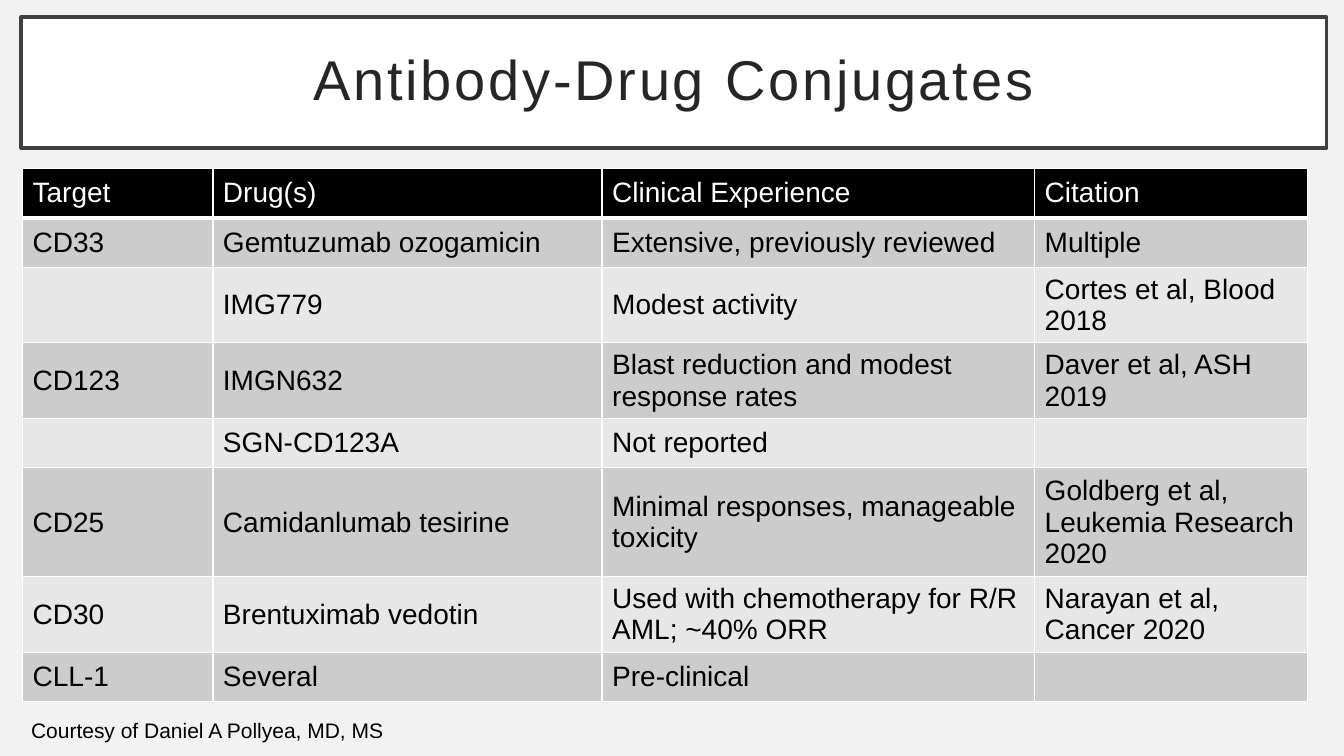
from pptx import Presentation
from pptx.dml.color import RGBColor
from pptx.enum.shapes import MSO_SHAPE
from pptx.enum.text import MSO_ANCHOR, PP_ALIGN
from pptx.oxml import parse_xml
from pptx.oxml.ns import nsdecls
from pptx.util import Pt

COLORS = {
    "background": "F2F2F2",
    "white": "FFFFFF",
    "black": "000000",
    "frame": "404040",
    "title": "262626",
    "odd_row": "CCCCCC",
    "even_row": "E7E7E7",
}
FONT = "Arial"
COLUMN_WIDTHS = [136, 278, 309, 195]
ROW_HEIGHTS = [35.28, 35.28, 54, 54, 35.28, 77.76, 54, 35.28]
CONJUGATES = [
    ["Target", "Drug(s)", "Clinical Experience", "Citation"],
    ["CD33", "Gemtuzumab ozogamicin", "Extensive, previously reviewed", "Multiple"],
    ["", "IMG779", "Modest activity", "Cortes et al, Blood 2018"],
    ["CD123", "IMGN632", "Blast reduction and modest response rates", "Daver et al, ASH 2019"],
    ["", "SGN-CD123A", "Not reported", ""],
    ["CD25", "Camidanlumab tesirine", "Minimal responses, manageable toxicity",
     "Goldberg et al, Leukemia Research 2020"],
    ["CD30", "Brentuximab vedotin", "Used with chemotherapy for R/R AML; ~40% ORR",
     "Narayan et al, Cancer 2020"],
    ["CLL-1", "Several", "Pre-clinical", ""],
]


def color(name):
    return RGBColor.from_string(COLORS[name])


def paint(fill, name):
    fill.solid()
    fill.fore_color.rgb = color(name)


def write(text_frame, text, size, color_name):
    paragraph = text_frame.paragraphs[0]
    paragraph.text = text
    paragraph.font.name = FONT
    paragraph.font.size = Pt(size)
    paragraph.font.color.rgb = color(color_name)
    return paragraph


def add_title(slide, text):
    shape = slide.shapes.add_shape(
        MSO_SHAPE.RECTANGLE, Pt(15.1), Pt(12.2), Pt(932.4), Pt(93.6))
    shape.shadow.inherit = False
    paint(shape.fill, "white")
    shape.line.color.rgb = color("frame")
    shape.line.width = Pt(2.5)
    frame = shape.text_frame
    frame.word_wrap = True
    frame.vertical_anchor = MSO_ANCHOR.MIDDLE
    frame.margin_left = frame.margin_right = Pt(14.4)
    frame.margin_top = frame.margin_bottom = Pt(14.4)
    paragraph = write(frame, text, 40, "title")
    paragraph.alignment = PP_ALIGN.CENTER
    paragraph.line_spacing = 0.9
    paragraph.runs[0].font._element.set("spc", "200")


def add_borders(cell, bottom_width):
    properties = cell._tc.get_or_add_tcPr()
    widths = {"lnL": 1, "lnR": 1, "lnT": 1, "lnB": bottom_width}
    for side, width in widths.items():
        properties.append(parse_xml(
            f'<a:{side} {nsdecls("a")} w="{Pt(width)}"><a:solidFill>'
            f'<a:srgbClr val="{COLORS["white"]}"/></a:solidFill></a:{side}>'))


def add_conjugate_table(slide):
    table = slide.shapes.add_table(
        len(ROW_HEIGHTS), len(COLUMN_WIDTHS), Pt(16.1), Pt(120.4),
        Pt(sum(COLUMN_WIDTHS)), Pt(sum(ROW_HEIGHTS))).table
    for column, width in zip(table.columns, COLUMN_WIDTHS):
        column.width = Pt(width)
    for index, (row, height, texts) in enumerate(zip(table.rows, ROW_HEIGHTS, CONJUGATES)):
        row.height = Pt(height)
        is_header = index == 0
        fill_name = "black" if is_header else "odd_row" if index % 2 else "even_row"
        for cell, text in zip(row.cells, texts):
            add_borders(cell, 3 if is_header else 1)
            paint(cell.fill, fill_name)
            cell.vertical_anchor = MSO_ANCHOR.MIDDLE
            paragraph = write(cell.text_frame, text, 20, "white" if is_header else "black")
            paragraph.font.bold = False


def add_credit(slide, text):
    box = slide.shapes.add_textbox(Pt(15.1), Pt(509), Pt(269.3), Pt(25.2))
    box.text_frame.word_wrap = False
    write(box.text_frame, text, 15, "black")


def main():
    presentation = Presentation()
    presentation.slide_width = Pt(960)
    presentation.slide_height = Pt(540)
    slide = presentation.slides.add_slide(presentation.slide_layouts[6])
    paint(slide.background.fill, "background")
    add_title(slide, "Antibody-Drug Conjugates")
    add_conjugate_table(slide)
    add_credit(slide, "Courtesy of Daniel A Pollyea, MD, MS")
    presentation.save("out.pptx")


if __name__ == "__main__":
    main()
